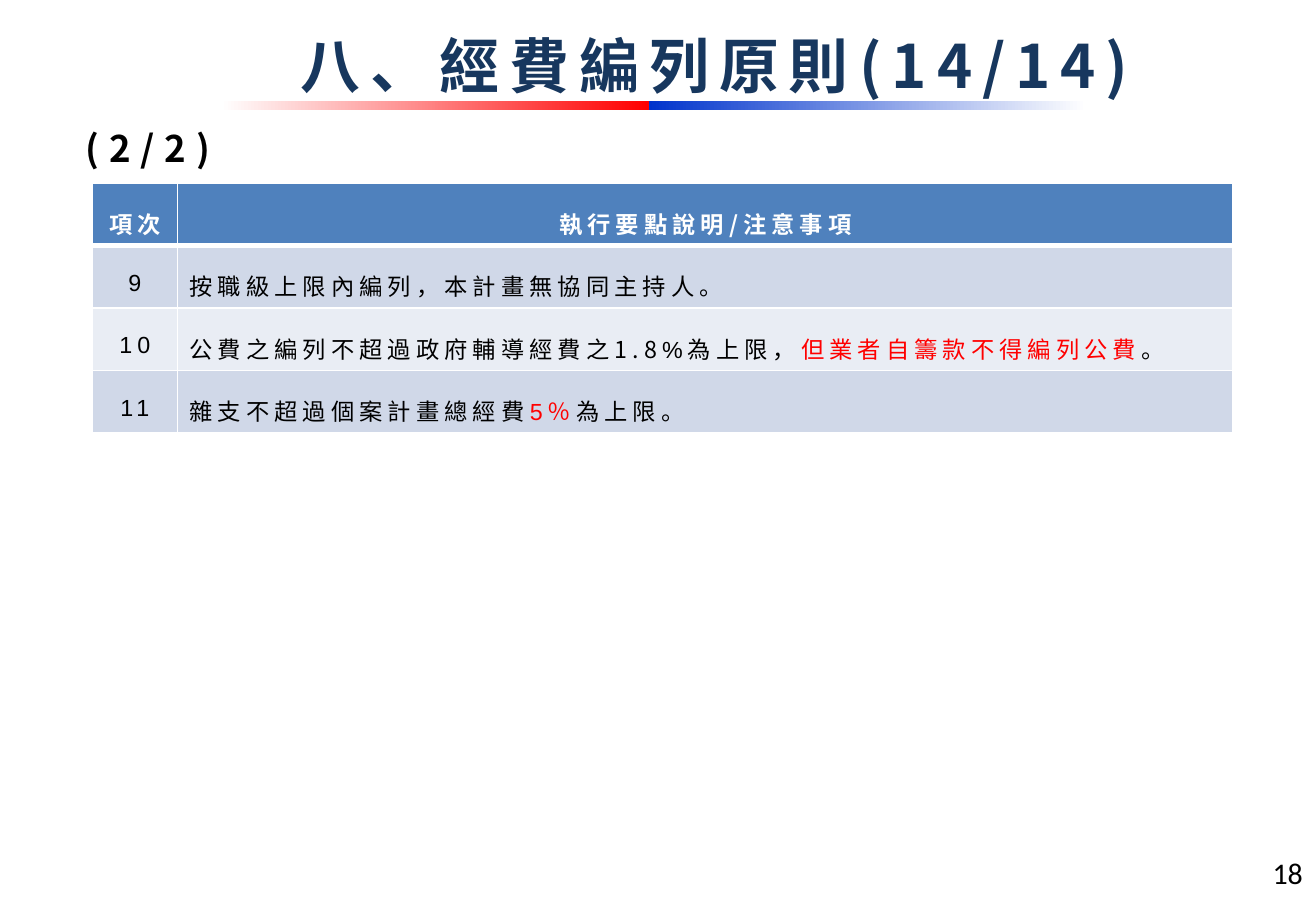
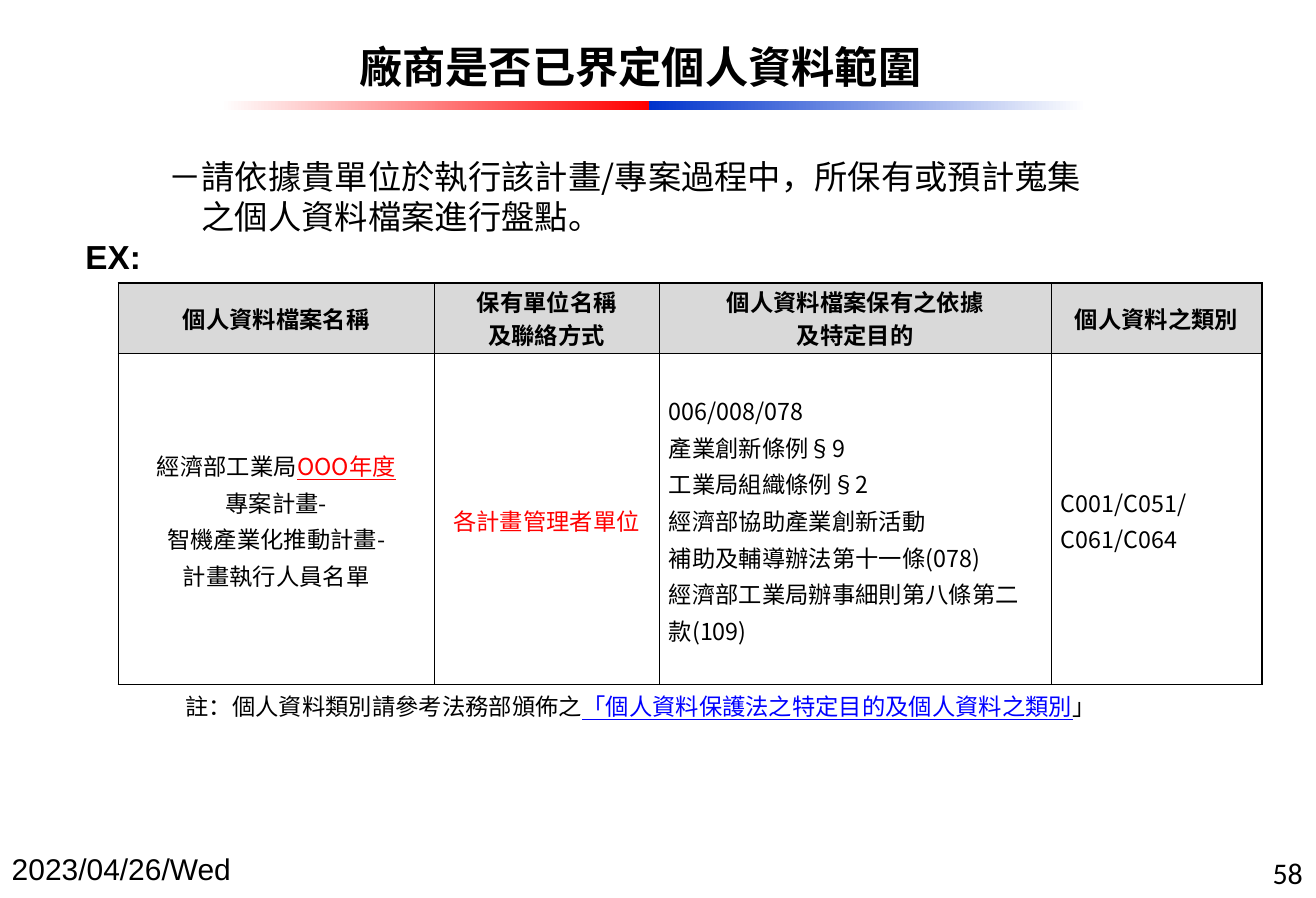
from lxml import etree
from pptx import Presentation
from pptx import util as u
from pptx.dml.color import RGBColor
from pptx.enum import shapes, text
from pptx.oxml.ns import qn

BLACK = RGBColor(0x00, 0x00, 0x00)
WHITE = RGBColor(0xFF, 0xFF, 0xFF)
RED = RGBColor(0xFF, 0x00, 0x00)
BAND_BLUE = RGBColor(0x00, 0x33, 0xCC)
LINK_BLUE = RGBColor(0x00, 0x00, 0xFF)
NAVY = RGBColor(0x17, 0x37, 0x5E)
HEADER_BLUE = RGBColor(0x4F, 0x81, 0xBD)
ROW_DARK = RGBColor(0xD0, 0xD8, 0xE8)
ROW_LIGHT = RGBColor(0xE9, 0xED, 0xF4)
HEADER_GRAY = RGBColor(0xD9, 0xD9, 0xD9)

CJK = "Noto Sans CJK SC"
LEFT, CENTER = text.PP_ALIGN.LEFT, text.PP_ALIGN.CENTER
RIGHT, JUSTIFY = text.PP_ALIGN.RIGHT, text.PP_ALIGN.JUSTIFY
TOP, MIDDLE, BOTTOM = text.MSO_ANCHOR.TOP, text.MSO_ANCHOR.MIDDLE, text.MSO_ANCHOR.BOTTOM
WIDTH, HEIGHT = u.Inches(10.99), u.Inches(7.5)


def across(share):
    """Turn a percentage of the slide width into a length."""
    return u.Emu(int(WIDTH * share / 100))


def down(share):
    """Turn a percentage of the slide height into a length."""
    return u.Emu(int(HEIGHT * share / 100))


def add_span(para, words, size=14, font=CJK, color=BLACK, bold=False, underline=False, tracking=0):
    """Add one formatted run to a paragraph."""
    span = para.add_run()
    span.text = words
    span.font.size = u.Pt(size)
    span.font.name = font
    span.font.color.rgb = color
    span.font.bold = bold
    span.font.underline = underline
    properties = span.font._element
    if tracking:
        properties.set("spc", str(tracking * 100))
    east_asian = etree.Element(qn("a:ea"), typeface=CJK)
    properties.find(qn("a:latin")).addnext(east_asian)


def write(frame, content, align=LEFT, spacing=None, indents=(), **style):
    """Write paragraphs, each a string or a list of (words, changes) pairs."""
    paragraphs = [content] if isinstance(content, str) else content
    for index, spans in enumerate(paragraphs):
        para = frame.paragraphs[0] if index == 0 else frame.add_paragraph()
        para.alignment = align
        if spacing:
            para.line_spacing = spacing
        if index < len(indents):
            para._p.get_or_add_pPr().set("marL", str(u.Pt(indents[index])))
        for words, changes in [(spans, {})] if isinstance(spans, str) else spans:
            add_span(para, words, **{**style, **changes})


class SlideBuilder:
    """Hold the shared style and the slide being built."""

    def __init__(self):
        """Start a deck of the right size."""
        self.deck = Presentation()
        self.deck.slide_width, self.deck.slide_height = WIDTH, HEIGHT
        self.page = None

    def start(self, number):
        """Add a slide with its two-coloured rule and page number."""
        self.page = self.deck.slides.add_slide(self.deck.slide_layouts[6])
        self.band(16.8, 32.5, WHITE, RED)
        self.band(49.3, 33.3, BAND_BLUE, WHITE)
        self.label((80.7, 94.5, 19.2, 5.5), number, align=RIGHT, size=18, font="Calibri")

    def band(self, left, width, first, last):
        """Draw one half of the rule below the title."""
        bar = self.page.shapes.add_shape(
            shapes.MSO_SHAPE.RECTANGLE, across(left), down(11.2), across(width), down(1.1))
        bar.shadow.inherit = False
        bar.line.fill.background()
        bar.fill.gradient()
        bar.fill.gradient_angle = 0
        for stop, color in zip(bar.fill.gradient_stops, (first, last)):
            stop.color.rgb = color

    def label(self, place, content, anchor=TOP, wrap=True, **style):
        """Add a text box placed by percentages of the slide."""
        left, top, width, height = place
        box = self.page.shapes.add_textbox(across(left), down(top), across(width), down(height))
        box.text_frame.word_wrap = wrap
        box.text_frame.vertical_anchor = anchor
        write(box.text_frame, content, **style)

    def table(self, left, top, columns, rows):
        """Add a plain table and return it."""
        frame = self.page.shapes.add_table(
            len(rows), len(columns), across(left), down(top), across(sum(columns)), down(sum(rows)))
        grid = frame.table
        grid.first_row = grid.horz_banding = False
        for column, share in zip(grid.columns, columns):
            column.width = across(share)
        for row, share in zip(grid.rows, rows):
            row.height = down(share)
        return grid

    def cell(self, cell, content, fill=None, border=BLACK, top=1, bottom=1,
             anchor=MIDDLE, margins=None, **style):
        """Fill, border and write one table cell."""
        properties = cell._tc.get_or_add_tcPr()
        for side, width in (("L", 1), ("R", 1), ("T", top), ("B", bottom)):
            line = etree.SubElement(properties, qn("a:ln" + side), w=str(u.Pt(width)))
            paint = etree.SubElement(line, qn("a:solidFill"))
            etree.SubElement(paint, qn("a:srgbClr"), val=str(border))
        if fill is None:
            cell.fill.background()
        else:
            cell.fill.solid()
            cell.fill.fore_color.rgb = fill
        cell.vertical_anchor = anchor
        if margins:
            cell.margin_left = cell.margin_right = u.Inches(margins)
            cell.margin_top = cell.margin_bottom = 0
        write(cell.text_frame, content, **style)


def build_budget_slide(slide):
    """Build the slide on budgeting rules."""
    slide.start("18")
    slide.label((19.2, 1.5, 70.2, 10.3), "八、經費編列原則(14/14)", anchor=BOTTOM,
                align=CENTER, size=36, color=NAVY, bold=True, tracking=6)
    rules = [
        ("9", "按職級上限內編列，本計畫無協同主持人。"),
        ("10", [[("公費之編列不超過政府輔導經費之1.8", {}), ("%", {"font": "Arial"}),
                 ("為上限，", {}), ("但業者自籌款不得編列公費", {"color": RED}), ("。", {})]]),
        ("11", [[("雜支不超過個案計畫總經費", {}), ("5％", {"font": "Arial", "color": RED}),
                 ("為上限。", {})]]),
    ]
    grid = slide.table(7, 20.4, [6.5, 80.2], [6.95] * (len(rules) + 1))
    shared = {"border": WHITE, "spacing": 1.5, "tracking": 3}
    for column, heading in enumerate(("項次", "執行要點說明/注意事項")):
        slide.cell(grid.cell(0, column), heading, fill=HEADER_BLUE, bottom=3, anchor=TOP,
                   align=CENTER, color=WHITE, bold=True, **shared)
    for row, (number, rule) in enumerate(rules, 1):
        fill = ROW_DARK if row % 2 else ROW_LIGHT
        top = 3 if row == 1 else 1
        slide.cell(grid.cell(row, 0), number, fill=fill, top=top, align=CENTER,
                   font="Arial", **shared)
        slide.cell(grid.cell(row, 1), rule, fill=fill, top=top, anchor=TOP, **shared)
    slide.label((5.6, 13.2, 12.2, 6.3), "(2/2)", wrap=False, spacing=u.Pt(27),
                size=22, bold=True, tracking=6)


def build_personal_data_slide(slide):
    """Build the slide on the scope of personal data."""
    slide.start("58")
    slide.label((26.4, 3.7, 45.2, 7.2), "廠商是否已界定個人資料範圍", wrap=False,
                spacing=u.Pt(32), size=26, bold=True)
    slide.label((11.9, 16.8, 78.8, 10.3),
                ["－請依據貴單位於執行該計畫/專案過程中，所保有或預計蒐集", "之個人資料檔案進行盤點。"],
                spacing=u.Pt(24), indents=(0, 20), size=20)
    slide.label((5.6, 24.3, 12.2, 6.9), "EX:", spacing=1.3, size=20, font="Arial", bold=True)
    slide.label((0, 94.1, 19.2, 5.5), "2023/04/26/Wed", size=18, font="Arial")
    slide.label((13.2, 76.4, 77.8, 4.5), [[
        ("註：個人資料類別請參考法務部頒佈之", {}),
        ("「個人資料保護法之特定目的及個人資料之類別", {"color": LINK_BLUE, "underline": True}),
        ("」", {})]], spacing=u.Pt(17))
    headings = ["個人資料檔案名稱", ["保有單位名稱", "及聯絡方式"],
                ["個人資料檔案保有之依據", "及特定目的"], "個人資料之類別"]
    entries = [
        (CENTER, [[("經濟部工業局", {}), ("OOO年度", {"color": RED, "underline": True})],
                  "專案計畫-", "智機產業化推動計畫-", "計畫執行人員名單"]),
        (CENTER, [[("各計畫管理者單位", {"color": RED})]]),
        (LEFT, ["006/008/078", "產業創新條例§9", "工業局組織條例§2", "經濟部協助產業創新活動",
                "補助及輔導辦法第十一條(078)", "經濟部工業局辦事細則第八條第二款(109)"]),
        (JUSTIFY, ["C001/C051/", "C061/C064"]),
    ]
    grid = slide.table(9, 31.5, [24, 17.1, 29.8, 16], [7.9, 36.8])
    for column, (heading, (align, entry)) in enumerate(zip(headings, entries)):
        slide.cell(grid.cell(0, column), heading, fill=HEADER_GRAY, margins=0.08,
                   align=CENTER, spacing=u.Pt(20), bold=True)
        slide.cell(grid.cell(1, column), entry, margins=0.08, align=align, spacing=u.Pt(22))


def main():
    """Build both slides and save the deck."""
    slide = SlideBuilder()
    build_budget_slide(slide)
    build_personal_data_slide(slide)
    slide.deck.save("out.pptx")


if __name__ == "__main__":
    main()
